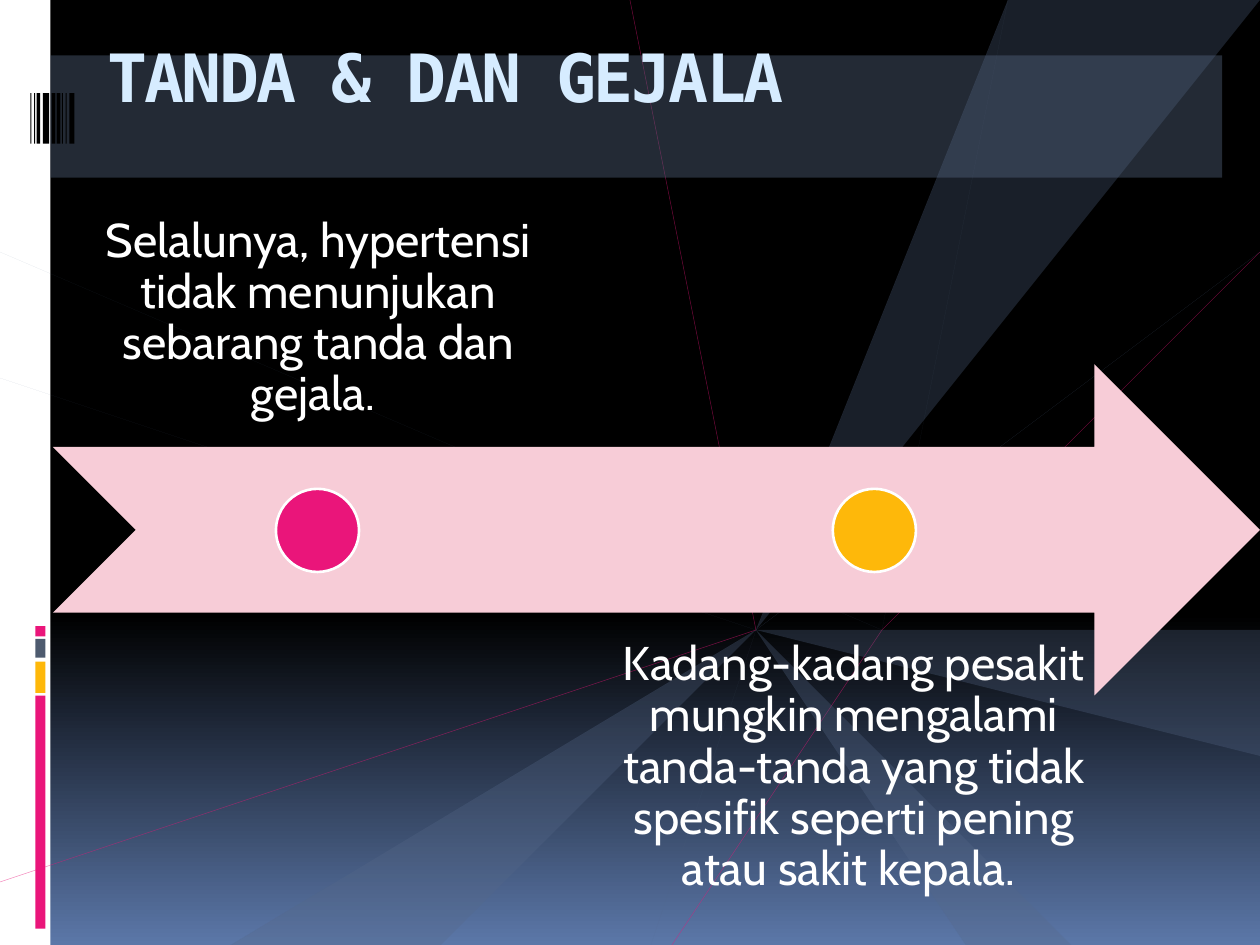
from copy import deepcopy
from typing import NamedTuple, Optional

from lxml.etree import SubElement
from pptx import Presentation
from pptx.dml.color import RGBColor
from pptx.enum.shapes import MSO_SHAPE
from pptx.enum.text import MSO_ANCHOR, MSO_AUTO_SIZE, PP_ALIGN
from pptx.oxml.ns import qn
from pptx.util import Inches, Pt

# The slide is a grid of 10 columns by 7.5 rows
COLUMNS, ROWS = 10, 7.5
CELL = Inches(1)

WHITE = RGBColor(0xFF, 0xFF, 0xFF)
BLACK = RGBColor(0x00, 0x00, 0x00)
PINK = RGBColor(0xEA, 0x15, 0x7A)
PALE_PINK = RGBColor(0xF7, 0xCC, 0xD7)
AMBER = RGBColor(0xFE, 0xB8, 0x0A)
SLATE = RGBColor(0x4E, 0x5B, 0x6F)
BAND_BLUE = RGBColor(0x58, 0x6A, 0x86)
BEAM_BLUE = RGBColor(0x56, 0x69, 0x89)
HORIZON_BLUE = RGBColor(0x5B, 0x77, 0xA8)
TITLE_BLUE = RGBColor(0xD6, 0xEC, 0xFF)

BODY_FONT, TITLE_FONT = "Cabin", "DejaVu Sans Mono"


class Box(NamedTuple):
    column: float
    row: float
    width: float
    height: float

    def emu(self) -> list[int]:
        return [round(part * CELL) for part in self]


class Point(NamedTuple):
    column: float
    row: float


class Beam(NamedTuple):
    tip: Point
    edge_start: Point
    edge_end: Point
    color: RGBColor = BEAM_BLUE


class Stage(NamedTuple):
    text: str
    text_box: Box
    anchor: MSO_ANCHOR
    dot_column: float
    dot_color: RGBColor


def set_opacity(shape, percent: int) -> None:
    for color in shape.element.spPr.iter(qn("a:srgbClr")):
        SubElement(color, qn("a:alpha"), val=str(percent * 1000))


def add_figure(slide, kind: MSO_SHAPE, box: Box, fill: RGBColor,
               outline: Optional[RGBColor] = None):
    figure = slide.shapes.add_shape(kind, *box.emu())
    figure.shadow.inherit = False
    figure.fill.solid()
    figure.fill.fore_color.rgb = fill
    if outline is None:
        figure.line.fill.background()
    else:
        figure.line.color.rgb = outline
        figure.line.width = Pt(1.5)
    return figure


def add_polygon(slide, points: list[Point]):
    builder = slide.shapes.build_freeform(*points[0], scale=CELL)
    builder.add_line_segments(points[1:], close=True)
    polygon = builder.convert_to_shape()
    polygon.shadow.inherit = False
    return polygon


def add_beam(slide, beam: Beam) -> None:
    ray = add_polygon(slide, [beam.tip, beam.edge_start, beam.edge_end])
    ray.fill.solid()
    ray.fill.fore_color.rgb = beam.color
    ray.line.fill.background()
    set_opacity(ray, 30)


def add_outline(slide, points: list[Point]) -> None:
    outline = add_polygon(slide, points)
    outline.fill.background()
    outline.line.color.rgb = PINK
    outline.line.width = Pt(0.25)
    set_opacity(outline, 53)


def write(frame, text: str, font_name: str, size: float, color: RGBColor,
          align: PP_ALIGN):
    paragraph = frame.paragraphs[0]
    paragraph.alignment = align
    run = paragraph.add_run()
    run.text = text
    run.font.name = font_name
    run.font.size = Pt(size)
    run.font.color.rgb = color
    return run


def add_stage(slide, stage: Stage) -> None:
    frame = slide.shapes.add_textbox(*stage.text_box.emu()).text_frame
    frame.word_wrap = True
    frame.vertical_anchor = stage.anchor
    frame.margin_left = frame.margin_right = Inches(0.21)
    frame.margin_top = frame.margin_bottom = Inches(0.21)
    write(frame, stage.text, BODY_FONT, 27, WHITE, PP_ALIGN.CENTER)
    frame.paragraphs[0].line_spacing = 0.9
    dot = Box(stage.dot_column, 3.88, 0.66, 0.66)
    add_figure(slide, MSO_SHAPE.OVAL, dot, stage.dot_color, WHITE)


def paint_background(slide) -> None:
    fill = slide.background.fill
    fill.gradient()
    fill.gradient_angle = 270
    top, bottom = fill.gradient_stops
    top.color.rgb, top.position = BLACK, 0
    bottom.color.rgb, bottom.position = HORIZON_BLUE, 1
    first_stop = next(slide.element.iter(qn("a:gs")))
    middle_stop = deepcopy(first_stop)
    middle_stop.set("pos", "65000")
    first_stop.addnext(middle_stop)


def add_title(slide, text: str) -> None:
    title = slide.shapes.title
    title.left, title.top, title.width, title.height = Box(0.75, 0.17, 8.92, 0.85).emu()
    frame = title.text_frame
    frame.auto_size = MSO_AUTO_SIZE.NONE
    frame.word_wrap = True
    frame.vertical_anchor = MSO_ANCHOR.MIDDLE
    frame.margin_left = frame.margin_right = Inches(0.1)
    frame.margin_top, frame.margin_bottom = Inches(0.07), Inches(0.05)
    run = write(frame, text, TITLE_FONT, 38, TITLE_BLUE, PP_ALIGN.LEFT)
    run.font.bold = True
    run.font.element.set("spc", "-150") if hasattr(run.font, "element") else \
        run._r.get_or_add_rPr().set("spc", "-150")
    # Bring the title in front of the decoration
    slide.shapes.element.append(title.element) if hasattr(slide.shapes, "element") else \
        title.element.getparent().append(title.element)


HUB = Point(6.5, 4.67)
SIDE = 0.4  # right edge of the white side strip
BEAMS = [
    Beam(Point(6.59, 4.55), Point(7.63, 0), Point(7.67, 0), BAND_BLUE),
    Beam(HUB, Point(8.42, 0), Point(9.5, 0)),
    Beam(HUB, Point(COLUMNS, 5.08), Point(COLUMNS, 5.92)),
    Beam(HUB, Point(7.83, 0), Point(8, 0)),
    Beam(HUB, Point(8.36, ROWS), Point(8.79, ROWS)),
    Beam(HUB, Point(8.17, ROWS), Point(8.25, ROWS)),
    Beam(HUB, Point(COLUMNS, 1.5), Point(COLUMNS, 1.75)),
    Beam(HUB, Point(COLUMNS, 1.92), Point(COLUMNS, 2)),
    Beam(HUB, Point(1.08, ROWS), Point(2.92, ROWS)),
    Beam(Point(6.42, 4.67), Point(0.58, ROWS), Point(0.83, ROWS)),
    Beam(HUB, Point(SIDE, 2.67), Point(SIDE, 3.33)),
    Beam(Point(6.57, 4.67), Point(SIDE, 2.33), Point(SIDE, 2.42)),
    Beam(HUB, Point(5, ROWS), Point(5.17, ROWS), BAND_BLUE),
]
OUTLINES = [
    [Point(5.28, ROWS), Point(6.52, 4.67), Point(COLUMNS, 2.34),
     Point(COLUMNS, 2.42), Point(6.57, 4.71), Point(5.36, ROWS)],
    [Point(0.41, 7.15), Point(0.41, 7.23), Point(6.44, 4.63),
     Point(5.37, 0), Point(5.28, 0), Point(6.37, 4.59)],
]
# Row, height and colour of the side marks
SIDE_MARKS = [(5.52, 1.85, PINK), (5.25, 0.25, AMBER),
              (5.07, 0.15, SLATE), (4.97, 0.08, PINK)]
# Column and width of the thin black stripes
STRIPES = [(0.24, 0.01), (0.27, 0.01), (0.29, 0.03), (0.34, 0.05), (0.41, 0.03),
           (0.45, 0.03), (0.49, 0.01), (0.52, 0.01), (0.55, 0.04)]
STAGES = [
    Stage("Selalunya, hypertensi tidak menunjukan sebarang tanda dan gejala. ",
          Box(0.42, 0.92, 4.21, 2.63), MSO_ANCHOR.BOTTOM, 2.19, PINK),
    Stage("Kadang-kadang pesakit mungkin mengalami tanda-tanda yang tidak "
          "spesifik seperti pening atau sakit kepala. ",
          Box(4.67, 4.87, 4.21, 2.63), MSO_ANCHOR.TOP, 6.61, AMBER),
]


def main() -> None:
    deck = Presentation()
    deck.slide_width, deck.slide_height = Inches(COLUMNS), Inches(ROWS)
    slide = deck.slides.add_slide(deck.slide_layouts[5])
    paint_background(slide)

    # Side strip, rays and title band
    add_figure(slide, MSO_SHAPE.RECTANGLE, Box(0, 0, SIDE, ROWS), WHITE)
    for row, height, color in SIDE_MARKS:
        add_figure(slide, MSO_SHAPE.RECTANGLE, Box(0.28, row, 0.08, height), color)
    for outline in OUTLINES:
        add_outline(slide, outline)
    for beam in BEAMS:
        add_beam(slide, beam)
    band = add_figure(slide, MSO_SHAPE.RECTANGLE, Box(SIDE, 0.44, 9.3, 0.97), BAND_BLUE)
    set_opacity(band, 40)
    for column, width in STRIPES:
        add_figure(slide, MSO_SHAPE.RECTANGLE, Box(column, 0.74, width, 0.4), BLACK)

    # Timeline arrow with its stages
    add_figure(slide, MSO_SHAPE.NOTCHED_RIGHT_ARROW, Box(0.42, 2.89, 9.58, 2.63), PALE_PINK)
    for stage in STAGES:
        add_stage(slide, stage)
    add_title(slide, "TANDA & DAN GEJALA")
    deck.save("out.pptx")


if __name__ == "__main__":
    main()
